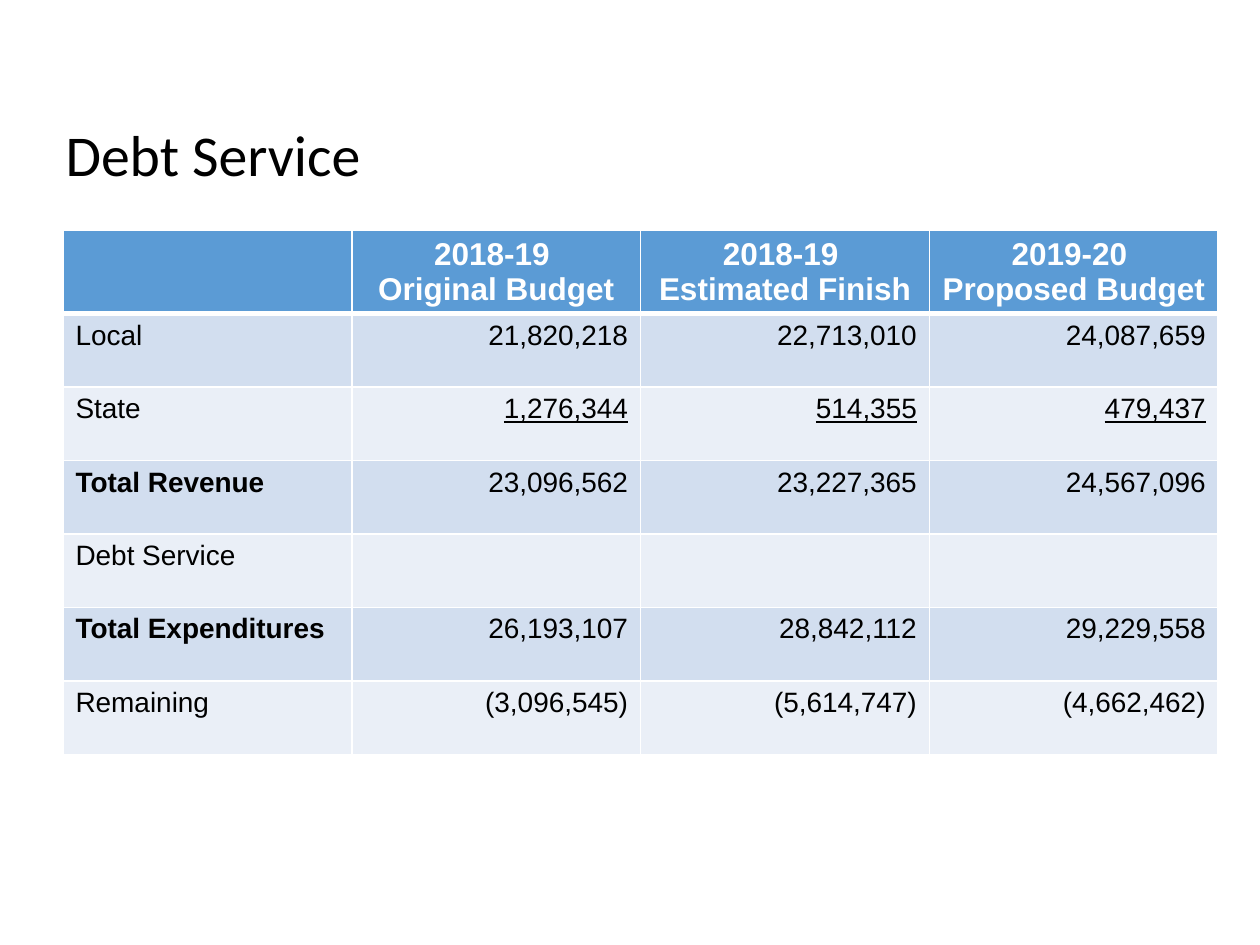
"""Build the Debt Service budget table slide."""
import pptx
import pptx.dml.color
import pptx.enum.text
import pptx.oxml
import pptx.oxml.ns
import pptx.util

Inches = pptx.util.Inches
Pt = pptx.util.Pt
RGBColor = pptx.dml.color.RGBColor
PP_ALIGN = pptx.enum.text.PP_ALIGN

TITLE = "Debt Service"
HEADERS = ["", "2018-19 \nOriginal Budget", "2018-19 \nEstimated Finish", "2019-20 \nProposed Budget"]
ROWS = [
    ["Local", "21,820,218", "22,713,010", "24,087,659"],
    ["State", "1,276,344", "514,355", "479,437"],
    ["Total Revenue", "23,096,562", "23,227,365", "24,567,096"],
    ["Debt Service", "", "", ""],
    ["Total Expenditures", "26,193,107", "28,842,112", "29,229,558"],
    ["Remaining", "(3,096,545)", "(5,614,747)", "(4,662,462)"],
]
UNDERLINED = "State"

BLACK = RGBColor(0x00, 0x00, 0x00)
WHITE = RGBColor(0xFF, 0xFF, 0xFF)
HEADER_BLUE = RGBColor(0x5B, 0x9B, 0xD5)
BANDS = [RGBColor(0xD2, 0xDE, 0xEF), RGBColor(0xEA, 0xEF, 0xF7)]


def add_run(p, text, size, font, color, bold=False, underline=False):
    r = p.add_run()
    r.text = text
    r.font.size = Pt(size)
    r.font.name = font
    r.font.color.rgb = color
    r.font.bold = bold
    r.font.underline = underline


def set_borders(cell, widths):
    tcPr = cell._tc.get_or_add_tcPr()
    for i, (side, width) in enumerate(widths.items()):
        tcPr.insert(i, pptx.oxml.parse_xml(
            f'<a:ln{side} {pptx.oxml.ns.nsdecls("a")} w="{Pt(width)}"><a:solidFill>'
            f'<a:srgbClr val="{WHITE}"/></a:solidFill></a:ln{side}>'))


def fill_cell(cell, text, fill, align, **font):
    cell.fill.solid()
    cell.fill.fore_color.rgb = fill
    tf = cell.text_frame
    for i, line in enumerate(text.split("\n") if text else []):
        p = tf.add_paragraph() if i else tf.paragraphs[0]
        p.alignment = align
        add_run(p, line, font="Arial", **font)


def add_title(s):
    sp = s.shapes.title
    sp.left, sp.top, sp.width, sp.height = Inches(0.42), Inches(0.75), Inches(9), Inches(1)
    tf = sp.text_frame
    tf.vertical_anchor = pptx.enum.text.MSO_ANCHOR.MIDDLE
    p = tf.paragraphs[0]
    p.alignment = PP_ALIGN.LEFT
    p.line_spacing = 0.9
    add_run(p, TITLE, 33, "Calibri", BLACK)


def add_budget_table(s):
    n_rows, n_cols = len(ROWS) + 1, len(HEADERS)
    table = s.shapes.add_table(n_rows, n_cols, Inches(0.5), Inches(1.83),
                               Inches(9.17), Inches(4.08)).table
    for j, text in enumerate(HEADERS):
        cell = table.cell(0, j)
        fill_cell(cell, text, HEADER_BLUE, PP_ALIGN.CENTER, size=18, color=WHITE, bold=True)
        set_borders(cell, {"L": 1, "R": 1, "T": 1, "B": 3})
    for i, row in enumerate(ROWS):
        for j, text in enumerate(row):
            cell = table.cell(i + 1, j)
            fill_cell(cell, text, BANDS[i % 2], PP_ALIGN.RIGHT if j else PP_ALIGN.LEFT,
                      size=16, color=BLACK, bold=text.startswith("Total"),
                      underline=j > 0 and row[0] == UNDERLINED)
            set_borders(cell, {"L": 1, "R": 1, "T": 1 if i else 3, "B": 1})


def main():
    prs = pptx.Presentation()
    prs.slide_width, prs.slide_height = Inches(10), Inches(7.5)
    s = prs.slides.add_slide(prs.slide_layouts.get_by_name("Title Only"))
    add_title(s)
    add_budget_table(s)
    prs.save("out.pptx")


if __name__ == "__main__":
    main()
